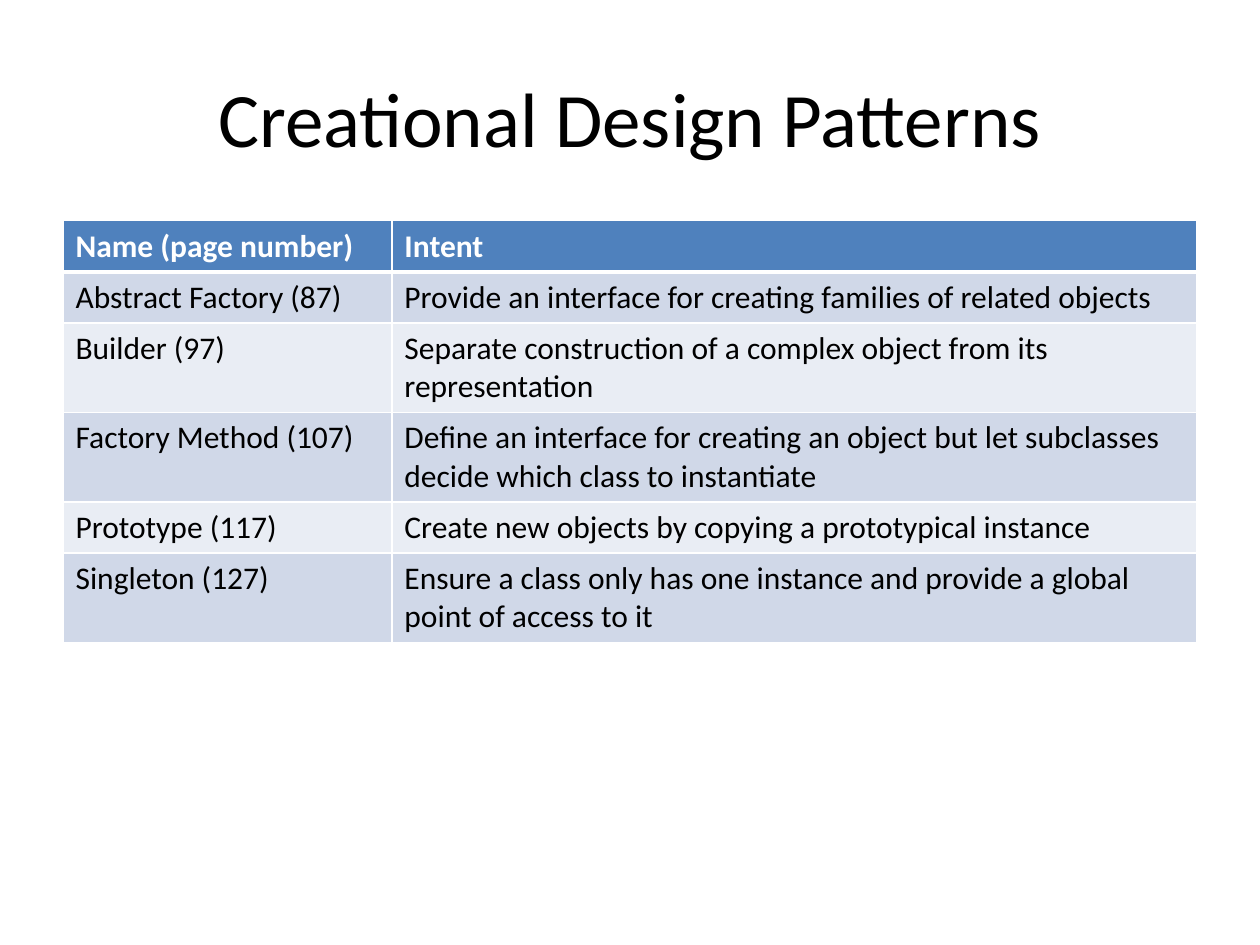
import pptx
import pptx.dml.color
import pptx.enum.text
import pptx.oxml.ns
import pptx.util
from lxml import etree

Cm = pptx.util.Cm
Pt = pptx.util.Pt

FONT = "Calibri"
COLOURS = {
    "text": "000000",
    "header_text": "FFFFFF",
    "header": "4F81BD",
    "odd_row": "D0D8E8",
    "even_row": "E9EDF4",
    "border": "FFFFFF",
}
COLUMN_WIDTHS = [Cm(6.63), Cm(16.23)]
ROW_HEIGHT = Cm(1.03)
PATTERNS = [
    ("Name (page number)", "Intent"),
    ("Abstract Factory (87)",
     "Provide an interface for creating families of related objects"),
    ("Builder (97)",
     "Separate construction of a complex object from its representation"),
    ("Factory Method (107)",
     "Define an interface for creating an object but let subclasses "
     "decide which class to instantiate"),
    ("Prototype (117)",
     "Create new objects by copying a prototypical instance"),
    ("Singleton (127)",
     "Ensure a class only has one instance and provide a global "
     "point of access to it"),
]


def rgb(name):
    return pptx.dml.color.RGBColor.from_string(COLOURS[name])


def add_span(para, text, size, colour, bold=False):
    span = para.add_run()
    span.text = text
    span.font.name = FONT
    span.font.size = Pt(size)
    span.font.bold = bold
    span.font.color.rgb = rgb(colour)


def set_borders(cell, widths):
    """Draw the cell's edges; widths maps L, R, T and B, in that order, to points."""
    qn = pptx.oxml.ns.qn
    properties = cell._tc.get_or_add_tcPr()
    for side, width in widths.items():
        line = etree.SubElement(properties, qn(f"a:ln{side}"), w=str(Pt(width)))
        fill = etree.SubElement(line, qn("a:solidFill"))
        etree.SubElement(fill, qn("a:srgbClr"), val=COLOURS["border"])


def fill_cell(cell, text, row):
    is_header = row == 0
    # Borders must precede the fill in the cell properties.
    set_borders(cell, {"L": 1, "R": 1,
                       "T": 3 if row == 1 else 1,
                       "B": 3 if is_header else 1})
    cell.fill.solid()
    band = "odd_row" if row % 2 else "even_row"
    cell.fill.fore_color.rgb = rgb("header" if is_header else band)
    add_span(cell.text_frame.paragraphs[0], text, 18,
             "header_text" if is_header else "text", bold=is_header)


def add_title(page, text):
    title = page.shapes.title
    title.left, title.top = Cm(1.27), Cm(0.76)
    title.width, title.height = Cm(22.86), Cm(3.18)
    frame = title.text_frame
    frame.vertical_anchor = pptx.enum.text.MSO_ANCHOR.MIDDLE
    para = frame.paragraphs[0]
    para.alignment = pptx.enum.text.PP_ALIGN.CENTER
    add_span(para, text, 44, "text")


def add_pattern_table(page, rows):
    table = page.shapes.add_table(
        len(rows), len(COLUMN_WIDTHS), Cm(1.27), Cm(4.45),
        sum(COLUMN_WIDTHS), ROW_HEIGHT * len(rows)).table
    for column, width in zip(table.columns, COLUMN_WIDTHS):
        column.width = width
    for row, texts in enumerate(rows):
        table.rows[row].height = ROW_HEIGHT
        for column, text in enumerate(texts):
            fill_cell(table.cell(row, column), text, row)


def main():
    deck = pptx.Presentation()
    deck.slide_width, deck.slide_height = Cm(25.4), Cm(19.05)
    page = deck.slides.add_slide(deck.slide_layouts.get_by_name("Title Only"))
    add_title(page, "Creational Design Patterns")
    add_pattern_table(page, PATTERNS)
    deck.save("out.pptx")


if __name__ == "__main__":
    main()
